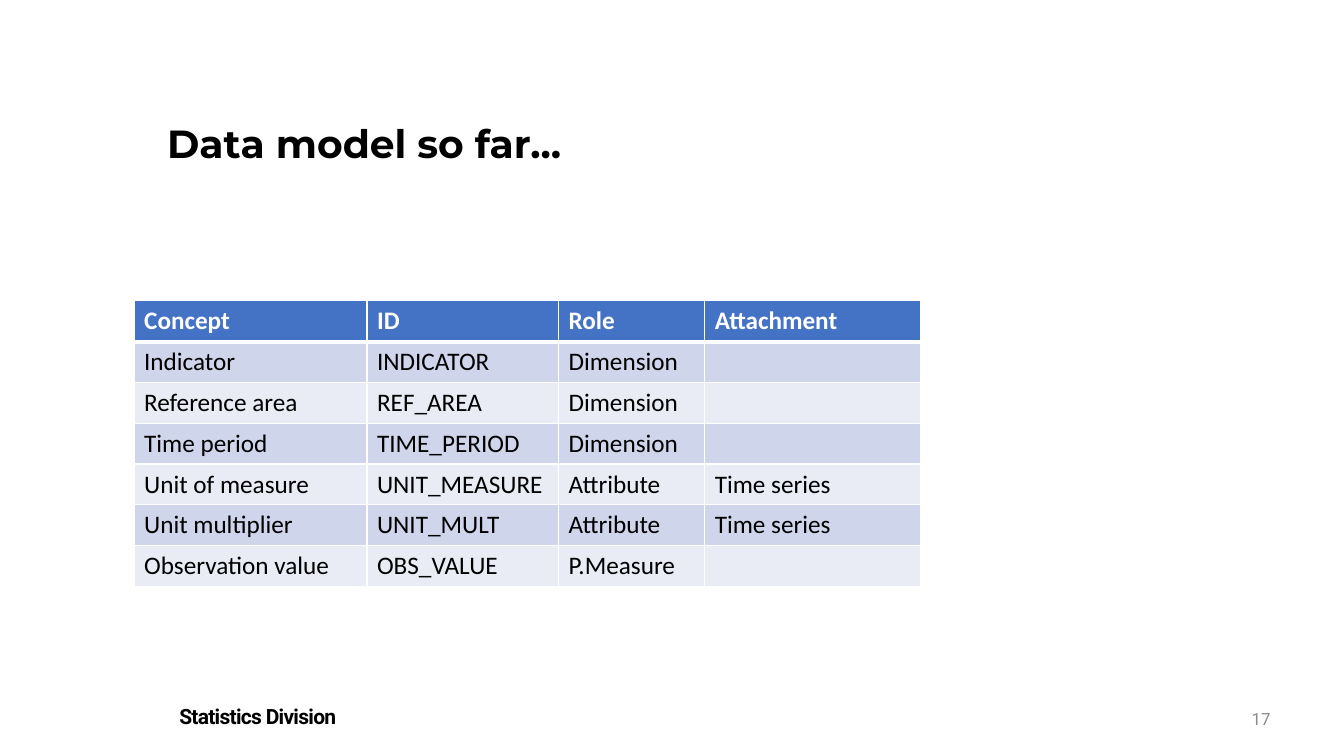
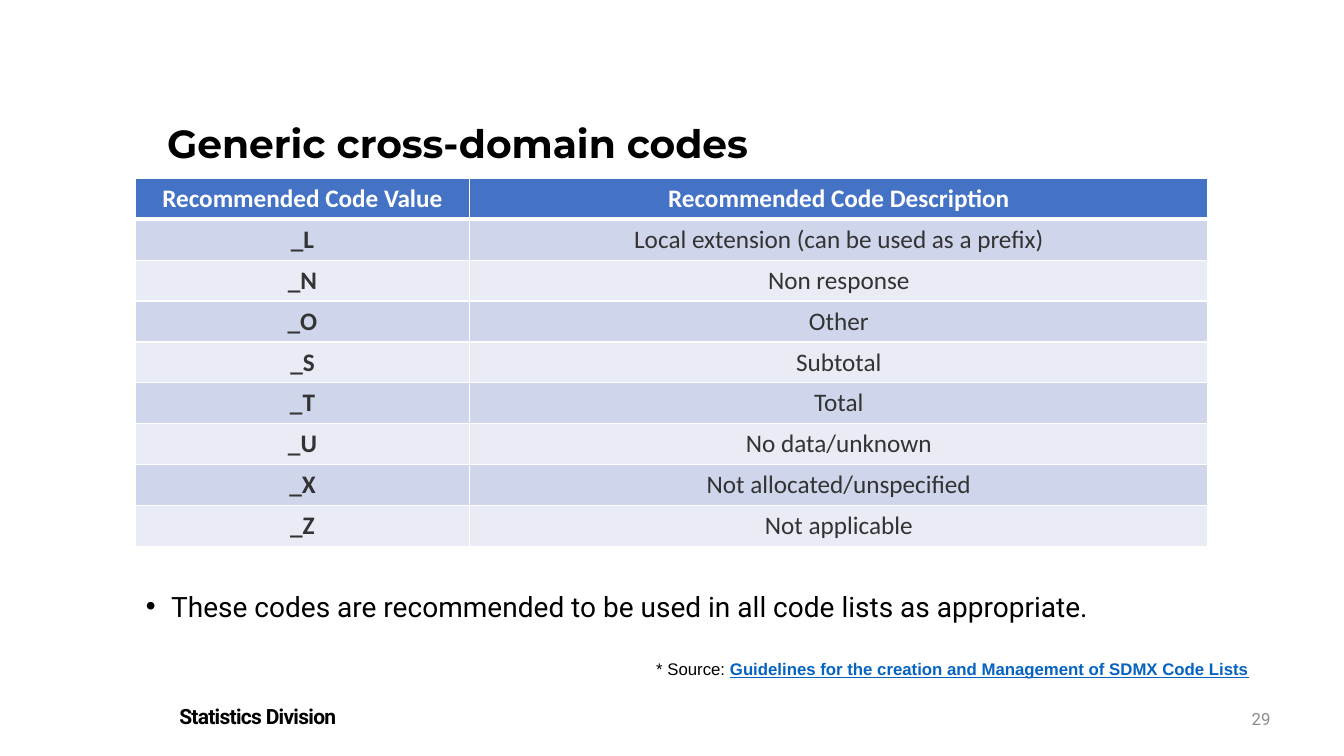
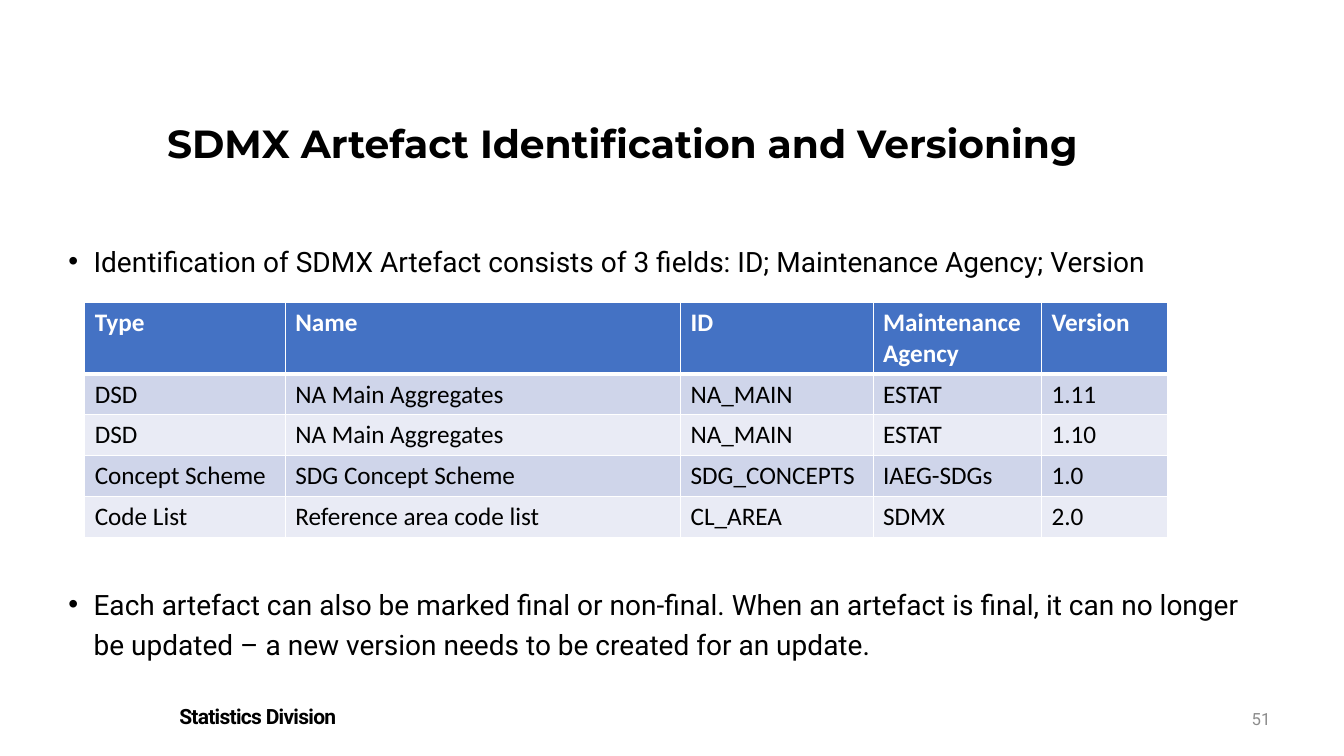
from lxml import etree
from pptx import Presentation
from pptx.dml.color import RGBColor
from pptx.enum import shapes, text as tx
from pptx.oxml import ns
from pptx.util import Inches, Pt

BLACK = RGBColor(0x00, 0x00, 0x00)
WHITE = RGBColor(0xFF, 0xFF, 0xFF)
GRAY = RGBColor(0x8C, 0x8C, 0x8C)
DARK = RGBColor(0x33, 0x33, 0x33)
LINK = RGBColor(0x05, 0x63, 0xC1)
HEAD = RGBColor(0x44, 0x72, 0xC4)
BANDS = (RGBColor(0xCF, 0xD5, 0xEA), RGBColor(0xE9, 0xEB, 0xF5))
LEFT, CENTER, RIGHT = (tx.PP_ALIGN.LEFT, tx.PP_ALIGN.CENTER, tx.PP_ALIGN.RIGHT)
TOP, MIDDLE = tx.MSO_ANCHOR.TOP, tx.MSO_ANCHOR.MIDDLE

CONCEPTS = [
    ("Concept", "ID", "Role", "Attachment"),
    ("Indicator", "INDICATOR", "Dimension", ""),
    ("Reference area", "REF_AREA", "Dimension", ""),
    ("Time period", "TIME_PERIOD", "Dimension", ""),
    ("Unit of measure", "UNIT_MEASURE", "Attribute", "Time series"),
    ("Unit multiplier", "UNIT_MULT", "Attribute", "Time series"),
    ("Observation value", "OBS_VALUE", "P.Measure", ""),
]
CODES = [
    ("Recommended Code Value", "Recommended Code Description"),
    ("_L", "Local extension (can be used as a prefix)"),
    ("_N", "Non response"),
    ("_O", "Other"),
    ("_S", "Subtotal"),
    ("_T", "Total"),
    ("_U", "No data/unknown"),
    ("_X", "Not allocated/unspecified"),
    ("_Z", "Not applicable"),
]
ITEMS = [
    ("Type", "Name", "ID", "Maintenance Agency", "Version"),
    ("DSD", "NA Main Aggregates", "NA_MAIN", "ESTAT", "1.11"),
    ("DSD", "NA Main Aggregates", "NA_MAIN", "ESTAT", "1.10"),
    ("Concept Scheme", "SDG Concept Scheme", "SDG_CONCEPTS", "IAEG-SDGs", "1.0"),
    ("Code List", "Reference area code list", "CL_AREA", "SDMX", "2.0"),
]


def style(para, face, size, color=BLACK, bold=False, align=LEFT):
    para.alignment = align
    font = para.font
    font.name, font.size, font.bold = face, Pt(size), bold
    font.color.rgb = color


def fill_text(shape, words, *look, **more):
    """Write one paragraph in a shape; further arguments go to style."""
    frame = shape.text_frame
    frame.word_wrap = True
    para = frame.paragraphs[0]
    para.add_run().text = words
    style(para, *look, **more)
    return para


def add_text(slide, box, *words, **more):
    shape = slide.shapes.add_textbox(*map(Inches, box))
    return fill_text(shape, *words, **more), shape.text_frame


def add_bullet(slide, box, words):
    para, _ = add_text(slide, box, words, "Roboto", 20)
    props = para._p.get_or_add_pPr()
    props.set("marL", str(Inches(0.25)))
    props.set("indent", str(-Inches(0.25)))
    for mark in (etree.Element(ns.qn("a:buFont"), typeface="Arial"),
                 etree.Element(ns.qn("a:buChar"), char="•")):
        props.insert_element_before(mark, "a:tabLst", "a:defRPr", "a:extLst")
    para.line_spacing = 1.2
    para.space_after = Pt(6)


def add_rules(cell, bottom):
    """Draw white lines round a cell, with the bottom width in points."""
    props = cell._tc.get_or_add_tcPr()
    sides = (("L", 1), ("R", 1), ("T", 1), ("B", bottom))
    for spot, (side, width) in enumerate(sides):
        line = etree.Element(ns.qn("a:ln" + side), w=str(Pt(width)))
        fill = etree.SubElement(line, ns.qn("a:solidFill"))
        etree.SubElement(fill, ns.qn("a:srgbClr"), val=str(WHITE))
        props.insert(spot, line)


def add_grid(slide, left, top, height, widths, rows, first=None, codes=False):
    """Add a banded table; first is the header height, codes centres the cells."""
    first = first or height / len(rows)
    rest = (height - first) / (len(rows) - 1)
    table = slide.shapes.add_table(
        len(rows), len(widths), Inches(left), Inches(top),
        Inches(sum(widths)), Inches(height)).table
    for col, width in zip(table.columns, widths):
        col.width = Inches(width)
    for r, row in enumerate(rows):
        table.rows[r].height = Inches(rest if r else first)
        for c, words in enumerate(row):
            cell = table.cell(r, c)
            cell.text = words
            cell.fill.solid()
            cell.fill.fore_color.rgb = BANDS[(r - 1) % 2] if r else HEAD
            add_rules(cell, 1 if r else 3)
            color = (DARK if codes else BLACK) if r else WHITE
            style(cell.text_frame.paragraphs[0], "Calibri", 18, color,
                  r == 0 or (codes and c == 0), CENTER if codes else LEFT)
            if codes:
                cell.vertical_anchor = MIDDLE
                cell.margin_left = cell.margin_right = Inches(0.07)
                cell.margin_top = cell.margin_bottom = 0


def add_footer(slide, box):
    band = slide.shapes.add_shape(shapes.MSO_SHAPE.RECTANGLE, *map(Inches, box))
    band.shadow.inherit = False
    band.fill.solid()
    band.fill.fore_color.rgb = WHITE
    band.line.fill.background()
    band.text_frame.vertical_anchor = TOP
    para = fill_text(band, "Statistics Division", "Roboto", 15, bold=True)
    para.runs[0]._r.get_or_add_rPr().set("spc", "-50")


def add_page(deck, title, number):
    """Add a slide with the shared title, footer and page number."""
    slide = deck.slides.add_slide(deck.slide_layouts[6])
    add_footer(slide, (1.68, 6.93, 5.84, 0.35))
    head, _ = add_text(slide, (1.56, 1.19, 10.86, 0.91), title,
                       "Montserrat", 28, bold=True)
    head.line_spacing = 0.9
    _, frame = add_text(slide, (12.06, 6.93, 0.64, 0.4), str(number),
                        "Roboto", 12, GRAY, align=RIGHT)
    frame.vertical_anchor = MIDDLE
    return slide


def add_source(slide, box):
    para, _ = add_text(slide, box, "* Source: ", "Arial", 12)
    run = para.add_run()
    run.text = "Guidelines for the creation and Management of SDMX Code Lists"
    run.font.bold = run.font.underline = True
    run.font.color.rgb = LINK


def model_page(deck):
    slide = add_page(deck, "Data model so far...", 17)
    add_grid(slide, 1.33, 2.98, 2.84, (2.31, 1.9, 1.45, 2.14), CONCEPTS, 0.41)


def codes_page(deck):
    slide = add_page(deck, "Generic cross-domain codes", 29)
    add_bullet(slide, (1.35, 5.73, 11.07, 0.58),
               "These codes are recommended to be used in all code lists"
               " as appropriate.")
    add_grid(slide, 1.34, 1.77, 3.65, (3.32, 7.32), CODES, codes=True)
    add_source(slide, (6.41, 6.49, 6.13, 0.3))


def version_page(deck):
    slide = add_page(deck, "SDMX Artefact Identification and Versioning", 51)
    add_bullet(slide, (0.58, 2.31, 11.83, 0.58),
               "Identification of SDMX Artefact consists of 3 fields: ID;"
               " Maintenance Agency; Version")
    add_bullet(slide, (0.58, 5.71, 11.83, 1.05),
               "Each artefact can also be marked final or non-final. When an"
               " artefact is final, it can no longer be updated – a new version"
               " needs to be created for an update.")
    add_grid(slide, 0.84, 3, 2.33, (1.99, 3.92, 1.91, 1.67, 1.25), ITEMS, 0.71)


def main():
    deck = Presentation()
    deck.slide_width, deck.slide_height = Inches(13.33), Inches(7.5)
    for page in (model_page, codes_page, version_page):
        page(deck)
    deck.save("out.pptx")


if __name__ == "__main__":
    main()
